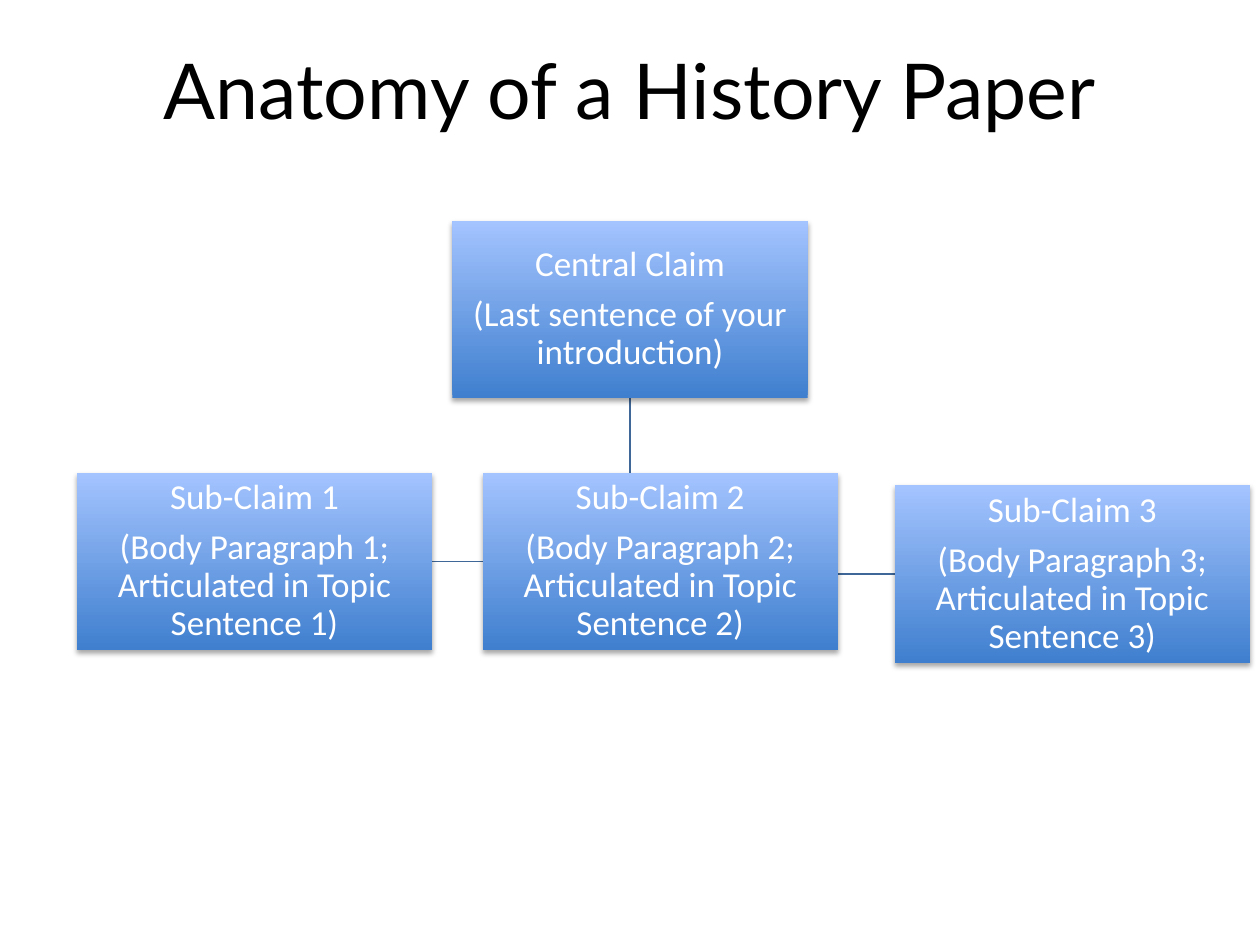
import dataclasses

import lxml.etree
import pptx
import pptx.dml.color
import pptx.enum.shapes
import pptx.enum.text
import pptx.oxml.ns
import pptx.util

Inches, Pt = pptx.util.Inches, pptx.util.Pt
RGB = pptx.dml.color.RGBColor
CENTER = pptx.enum.text.PP_ALIGN.CENTER
MIDDLE = pptx.enum.text.MSO_ANCHOR.MIDDLE

BLACK = RGB(0x00, 0x00, 0x00)
WHITE = RGB(0xFF, 0xFF, 0xFF)
DEEP = RGB(0x3F, 0x7F, 0xCE)
PALE = RGB(0xA4, 0xC4, 0xFF)
LINE = RGB(0x3F, 0x67, 0x97)

WIDTH, HEIGHT = 2.82, 1.41
INSET = Inches(0.01)
FRAME = {"word_wrap": True, "vertical_anchor": MIDDLE,
         "margin_left": INSET, "margin_right": INSET,
         "margin_top": INSET, "margin_bottom": INSET}
PARA = {"alignment": CENTER, "line_spacing": 0.9, "space_after": Pt(7)}
FONT = {"size": Pt(20), "name": "Calibri"}


@dataclasses.dataclass(frozen=True)
class Claim:
    left: float
    top: float
    name: str
    place: str

    @property
    def middle(self) -> float:
        return self.top + HEIGHT / 2


CENTRAL = Claim(3.59, 1.75, "Central Claim", "(Last sentence of your introduction)")
SUBS = [
    Claim(left, top, f"Sub-Claim {n}",
          f"(Body Paragraph {n}; Articulated in Topic Sentence {n})")
    for n, (left, top) in enumerate([(0.61, 3.75), (3.83, 3.75), (7.1, 3.85)], 1)
]


def apply(target, values: dict) -> None:
    """Set each attribute of target from a dict of format values."""
    for key, value in values.items():
        setattr(target, key, value)


def add_shadow(shape) -> None:
    shape.shadow.inherit = False
    qn = pptx.oxml.ns.qn
    effects = shape._element.spPr.find(qn("a:effectLst"))
    outer = lxml.etree.SubElement(
        effects, qn("a:outerShdw"), blurRad=str(Pt(3.1)), dist=str(Pt(1.8)),
        dir="5400000", rotWithShape="0")
    color = lxml.etree.SubElement(outer, qn("a:srgbClr"), val=str(BLACK))
    lxml.etree.SubElement(color, qn("a:alpha"), val="35000")


def add_box(slide, claim: Claim) -> None:
    box = slide.shapes.add_shape(
        pptx.enum.shapes.MSO_SHAPE.RECTANGLE, Inches(claim.left),
        Inches(claim.top), Inches(WIDTH), Inches(HEIGHT))
    box.line.fill.background()
    box.fill.gradient()
    box.fill.gradient_angle = 90
    for stop, color in zip(box.fill.gradient_stops, (DEEP, PALE)):
        stop.color.rgb = color
    add_shadow(box)
    frame = box.text_frame
    apply(frame, FRAME)
    frame.text = f"{claim.name}\n{claim.place}"
    for para in frame.paragraphs:
        apply(para, PARA)
        apply(para.font, FONT)
        para.font.color.rgb = WHITE


def add_elbow(slide, end: float, level: float) -> None:
    """Run down from the central claim, then sideways to a sub-claim."""
    mid = Inches(CENTRAL.left + WIDTH / 2)
    start = Inches(CENTRAL.top + HEIGHT)
    turn = Inches(level)
    path = slide.shapes.build_freeform(mid, start)
    path.add_line_segments([(mid, turn), (Inches(end), turn)], close=False)
    elbow = path.convert_to_shape()
    elbow.fill.background()
    elbow.line.color.rgb = LINE
    elbow.line.width = Pt(0.75)
    elbow.shadow.inherit = False


def add_title(slide, text: str) -> None:
    title = slide.shapes.title
    apply(title, {"left": Inches(0.5), "top": Inches(0.08),
                  "width": Inches(9), "height": Inches(1.25)})
    title.text_frame.text = text
    title.text_frame.vertical_anchor = MIDDLE
    para = title.text_frame.paragraphs[0]
    para.alignment = CENTER
    apply(para.font, {"size": Pt(44), "name": "Lato"})
    para.font.color.rgb = BLACK


def main() -> None:
    deck = pptx.Presentation()
    apply(deck, {"slide_width": Inches(10), "slide_height": Inches(7.5)})
    slide = deck.slides.add_slide(deck.slide_layouts[5])
    add_title(slide, "Anatomy of a History Paper")
    first, _, last = SUBS
    add_elbow(slide, last.left, last.middle)
    add_elbow(slide, first.left + WIDTH, first.middle)
    for claim in [CENTRAL, *SUBS]:
        add_box(slide, claim)
    deck.save("out.pptx")


if __name__ == "__main__":
    main()
